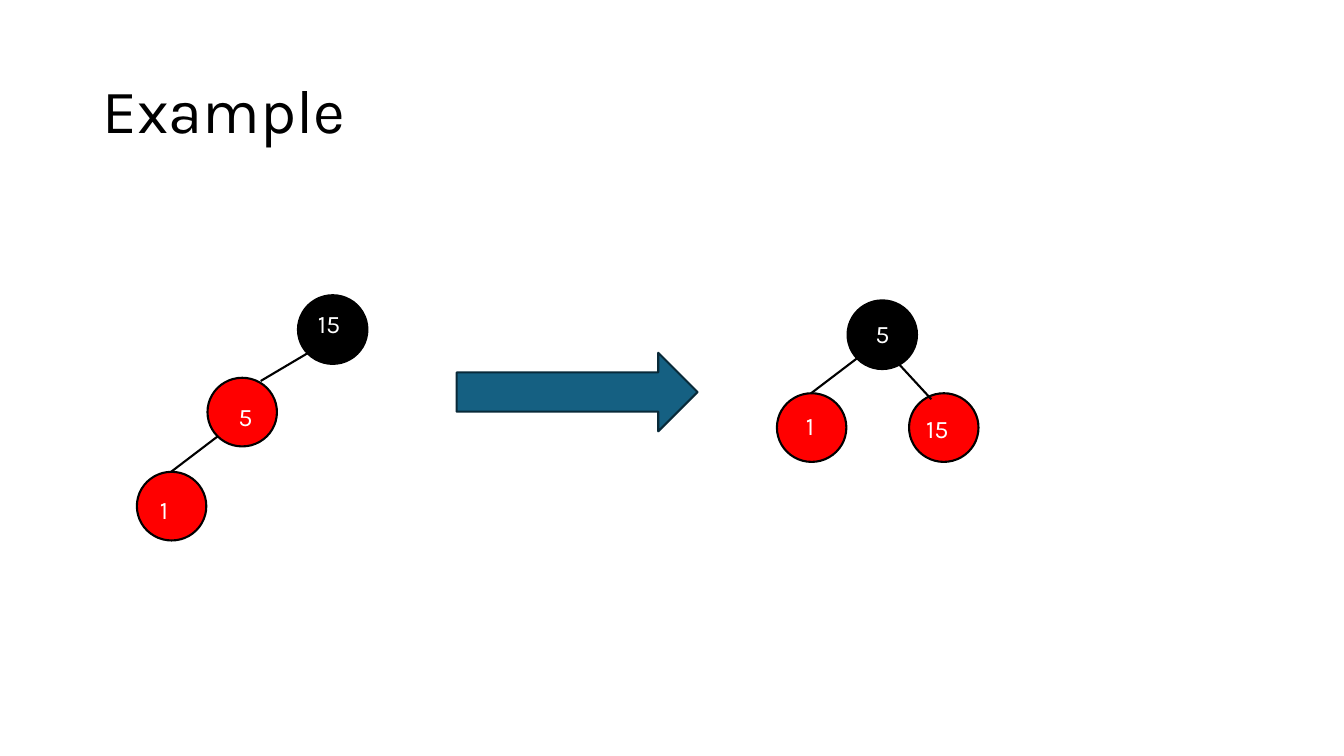
from lxml.etree import SubElement
from pptx import Presentation
from pptx.dml.color import RGBColor
from pptx.enum.shapes import MSO_CONNECTOR, MSO_SHAPE
from pptx.enum.text import MSO_ANCHOR, PP_ALIGN
from pptx.oxml.ns import qn
from pptx.util import Cm, Pt

COLORS = {
    "black": "000000",
    "red": "FF0000",
    "white": "FFFFFF",
    "arrow": "156082",
    "arrow_line": "092A39",
}
FONT = "Karla"
NODE_WIDTH, NODE_HEIGHT = 1.75, 1.73
LABEL_WIDTH, LABEL_HEIGHT = 1.42, 1.02
INSET = 0.25

# Node: key, fill, place in the tree, label place in the node, label indent
# Edge: start and end in the tree
UNBALANCED = {
    "nodes": [
        ("5", "red", (1.78, 2.08), (0.23, 0.46), 0.3),
        ("1", "red", (0, 4.45), (0.18, 0.43), 0.15),
        ("15", "black", (4.06, 0), (0.25, 0.2), 0),
    ],
    "edges": [((2.03, 3.56), (0.86, 4.45)), ((3.12, 2.16), (4.32, 1.45))],
}
BALANCED = {
    "nodes": [
        ("5", "black", (1.78, 0), (0.15, 0.33), 0.3),
        ("1", "red", (0, 2.34), (0.33, 0.3), 0.15),
        ("15", "red", (3.33, 2.34), (0.18, 0.38), 0),
    ],
    "edges": [((2.03, 1.45), (0.86, 2.34)), ((3.07, 1.6), (3.89, 2.49))],
}


def color(name):
    return RGBColor.from_string(COLORS[name])


def style_text(para, size, color_name):
    para.font.name = FONT
    para.font.size = Pt(size)
    para.font.color.rgb = color(color_name)


def style_line(shape, color_name):
    shape.line.color.rgb = color(color_name)
    shape.line.width = Pt(1.5)


def add_filled(page, kind, left, top, width, height, fill, line):
    shape = page.shapes.add_shape(kind, Cm(left), Cm(top), Cm(width), Cm(height))
    shape.shadow.inherit = False
    shape.fill.solid()
    shape.fill.fore_color.rgb = color(fill)
    style_line(shape, line)


def add_label(page, left, top, text, indent):
    box = page.shapes.add_textbox(Cm(left), Cm(top), Cm(LABEL_WIDTH), Cm(LABEL_HEIGHT))
    frame = box.text_frame
    frame.word_wrap = True
    frame.margin_left = Cm(INSET + indent)
    para = frame.paragraphs[0]
    para.text = text
    style_text(para, 18, "white")


def add_edge(page, left, top, start, end):
    edge = page.shapes.add_connector(
        MSO_CONNECTOR.STRAIGHT,
        Cm(left + start[0]), Cm(top + start[1]),
        Cm(left + end[0]), Cm(top + end[1]),
    )
    style_line(edge, "black")
    SubElement(edge._element.spPr, qn("a:effectLst"))


def add_tree(page, left, top, tree):
    """Draw the nodes, then the edges, then the keys, from the tree's top left."""
    for key, fill, (x, y), offset, indent in tree["nodes"]:
        add_filled(page, MSO_SHAPE.OVAL, left + x, top + y,
                   NODE_WIDTH, NODE_HEIGHT, fill, "black")
    for start, end in tree["edges"]:
        add_edge(page, left, top, start, end)
    for key, fill, (x, y), (dx, dy), indent in tree["nodes"]:
        add_label(page, left + x + dx, top + y + dy, key, indent)


def add_title(page, left, top, width, height, text):
    title = page.shapes.title
    title.left, title.top = Cm(left), Cm(top)
    title.width, title.height = Cm(width), Cm(height)
    title.text_frame.vertical_anchor = MSO_ANCHOR.MIDDLE
    para = title.text_frame.paragraphs[0]
    para.text = text
    para.alignment = PP_ALIGN.LEFT
    para.line_spacing = 0.9
    style_text(para, 44, "black")


def main():
    deck = Presentation()
    deck.slide_width, deck.slide_height = Cm(33.87), Cm(19.05)
    page = deck.slides.add_slide(deck.slide_layouts.get_by_name("Title Only"))
    add_title(page, 2.33, 1.01, 29.21, 3.68, "Example")
    add_tree(page, 19.58, 7.57, BALANCED)
    add_tree(page, 3.45, 7.44, UNBALANCED)
    add_filled(page, MSO_SHAPE.RIGHT_ARROW, 11.51, 8.89, 6.07, 1.98,
               "arrow", "arrow_line")
    deck.save("out.pptx")


if __name__ == "__main__":
    main()
